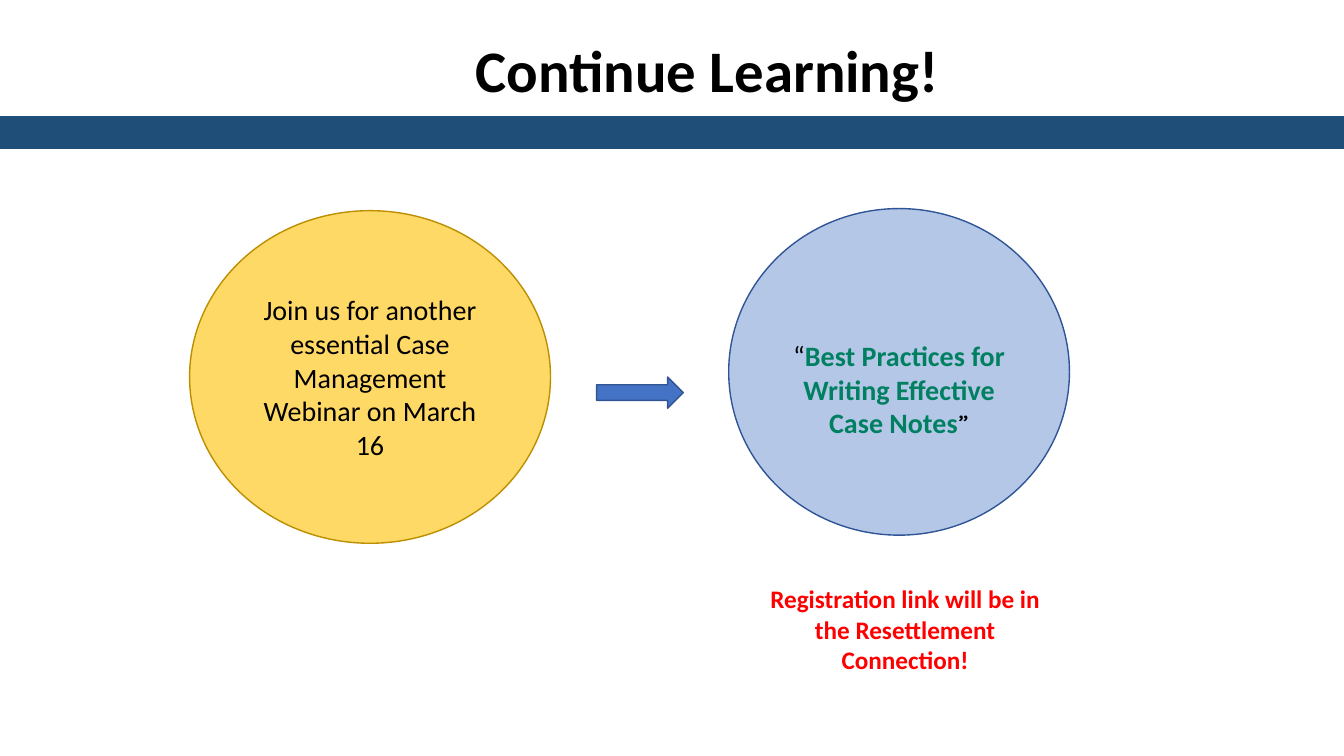
from dataclasses import dataclass

from pptx import Presentation
from pptx.dml.color import RGBColor
from pptx.enum.shapes import MSO_SHAPE as Shape
from pptx.enum.text import MSO_ANCHOR as Anchor, MSO_AUTO_SIZE as AutoSize, PP_ALIGN as Align
from pptx.util import Pt

BLACK = RGBColor(0x00, 0x00, 0x00)
NAVY = RGBColor(0x1F, 0x4E, 0x79)
GOLD = RGBColor(0xFF, 0xD9, 0x66)
DARK_GOLD = RGBColor(0xBD, 0x8E, 0x00)
PALE_BLUE = RGBColor(0xB4, 0xC7, 0xE7)
DEEP_BLUE = RGBColor(0x2F, 0x55, 0x97)
ARROW_BLUE = RGBColor(0x44, 0x72, 0xC4)
ARROW_EDGE = RGBColor(0x32, 0x54, 0x91)
GREEN = RGBColor(0x00, 0x80, 0x61)
RED = RGBColor(0xFF, 0x00, 0x00)

Box = tuple[float, float, float, float]


@dataclass(frozen=True)
class Span:
    text: str
    size: float = 20
    color: RGBColor = BLACK
    bold: bool = False
    font: str = "Calibri"


@dataclass(frozen=True)
class Figure:
    kind: Shape
    box: Box
    fill: RGBColor
    line: RGBColor
    spans: tuple[Span, ...] = ()
    top_inset: float = 3.6


TITLE = Span("Continue Learning!", 42, bold=True)
NOTE = Span("Registration link will be in the Resettlement Connection!", 18, RED, True)

FIGURES = [
    Figure(Shape.RECTANGLE, (0, 83.5, 960, 22.3), NAVY, NAVY),
    Figure(Shape.OVAL, (135.4, 150.5, 257.8, 237.6), GOLD, DARK_GOLD,
           (Span("Join us for another essential Case Management Webinar on March 16"),)),
    Figure(Shape.OVAL, (520.5, 149, 243.4, 233.3), PALE_BLUE, DEEP_BLUE,
           (Span("“"),
            Span("Best Practices for Writing Effective Case Notes", color=GREEN, bold=True),
            Span("”", font="Karla")),
           top_inset=28),
    Figure(Shape.RIGHT_ARROW, (426.2, 269.3, 61.9, 22.3), ARROW_BLUE, ARROW_EDGE),
]


def write(tf, spans: tuple[Span, ...], align: Align, anchor: Anchor) -> None:
    tf.word_wrap = True
    tf.auto_size = AutoSize.NONE
    tf.vertical_anchor = anchor
    p = tf.paragraphs[0]
    p.alignment = align
    for span in spans:
        r = p.add_run()
        r.text = span.text
        r.font.name = span.font
        r.font.size = Pt(span.size)
        r.font.bold = span.bold
        r.font.color.rgb = span.color


def draw(s, fig: Figure) -> None:
    sp = s.shapes.add_shape(fig.kind, *map(Pt, fig.box))
    sp.shadow.inherit = False
    sp.fill.solid()
    sp.fill.fore_color.rgb = fig.fill
    sp.line.color.rgb = fig.line
    sp.line.width = Pt(1)
    if fig.spans:
        sp.text_frame.margin_top = Pt(fig.top_inset)
        write(sp.text_frame, fig.spans, Align.CENTER, Anchor.MIDDLE)


def main() -> None:
    prs = Presentation()
    prs.slide_width, prs.slide_height = Pt(960), Pt(540)
    s = prs.slides.add_slide(prs.slide_layouts[5])

    title = s.shapes.title
    title.left, title.top, title.width, title.height = map(Pt, (332.6, 20.2, 388, 58.3))
    write(title.text_frame, (TITLE,), Align.LEFT, Anchor.TOP)

    for fig in FIGURES:
        draw(s, fig)

    note = s.shapes.add_textbox(*map(Pt, (532, 413.3, 229, 72.7)))
    write(note.text_frame, (NOTE,), Align.CENTER, Anchor.TOP)

    prs.save("out.pptx")


if __name__ == "__main__":
    main()
